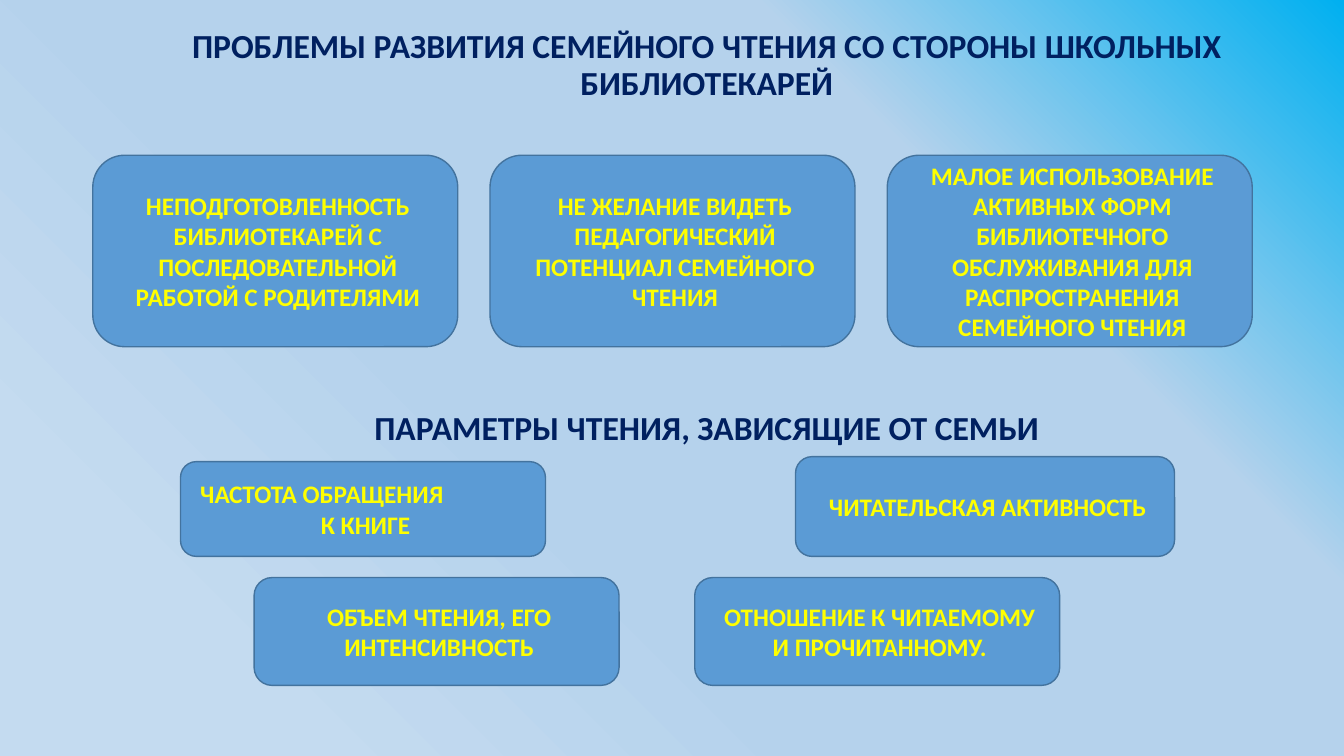
from copy import deepcopy

from pptx import Presentation
from pptx.dml.color import RGBColor
from pptx.enum.shapes import MSO_SHAPE
from pptx.enum.text import MSO_ANCHOR, MSO_AUTO_SIZE, PP_ALIGN
from pptx.util import Inches, Pt

ROUNDED = MSO_SHAPE.ROUNDED_RECTANGLE
MIDDLE = MSO_ANCHOR.MIDDLE
FIXED_SIZE = MSO_AUTO_SIZE.NONE
CENTER, LEFT = PP_ALIGN.CENTER, PP_ALIGN.LEFT

NAVY = RGBColor(0x00, 0x20, 0x60)
YELLOW = RGBColor(0xFF, 0xFF, 0x00)
BLUE = RGBColor(0x5B, 0x9B, 0xD5)
OUTLINE = RGBColor(0x43, 0x73, 0x9E)
SKY = RGBColor(0x00, 0xB0, 0xF0)
PALE = RGBColor(0xB5, 0xD2, 0xEC)
PALEST = RGBColor(0xC4, 0xDB, 0xF0)

BACKGROUND_STOPS = [(0, SKY), (0.28, PALE), (0.61, PALE), (0.85, PALEST)]
TITLE = "ПРОБЛЕМЫ РАЗВИТИЯ СЕМЕЙНОГО ЧТЕНИЯ СО СТОРОНЫ ШКОЛЬНЫХ БИБЛИОТЕКАРЕЙ"
SUBTITLE = "ПАРАМЕТРЫ ЧТЕНИЯ, ЗАВИСЯЩИЕ ОТ СЕМЬИ"
HEADING_LEFT, HEADING_WIDTH, HEADING_HEIGHT = 1.26, 11.5, 0.63
CARD_WIDTH = 3.62
PROBLEM_LEFT, PROBLEM_STEP = 0.92, 3.94
PROBLEMS = [
    "НЕПОДГОТОВЛЕННОСТЬ БИБЛИОТЕКАРЕЙ С ПОСЛЕДОВАТЕЛЬНОЙ РАБОТОЙ С РОДИТЕЛЯМИ",
    "НЕ ЖЕЛАНИЕ ВИДЕТЬ ПЕДАГОГИЧЕСКИЙ ПОТЕНЦИАЛ СЕМЕЙНОГО ЧТЕНИЯ",
    "МАЛОЕ ИСПОЛЬЗОВАНИЕ АКТИВНЫХ ФОРМ БИБЛИОТЕЧНОГО ОБСЛУЖИВАНИЯ "
    "ДЛЯ РАСПРОСТРАНЕНИЯ СЕМЕЙНОГО ЧТЕНИЯ",
]
PARAMETERS = [
    ("ЧИТАТЕЛЬСКАЯ АКТИВНОСТЬ", 7.89, 4.53, 3.76, 0.99),
    ("ОБЪЕМ ЧТЕНИЯ, ЕГО ИНТЕНСИВНОСТЬ", 2.52, 5.73, CARD_WIDTH, 1.07),
    ("ОТНОШЕНИЕ К ЧИТАЕМОМУ И ПРОЧИТАННОМУ.", 6.89, 5.73, CARD_WIDTH, 1.07),
]


class SlideBuilder:
    font_name = "Calibri"

    def __init__(self, page):
        self.page = page

    def gradient_background(self, stops):
        fill = self.page.background.fill
        fill.gradient()
        fill.gradient_angle = 225
        stop_list = self.page.element.xpath(".//a:gsLst")[0]
        while len(stop_list) < len(stops):
            stop_list.append(deepcopy(stop_list[0]))
        for stop, (position, color) in zip(fill.gradient_stops, stops):
            stop.position = position
            stop.color.rgb = color

    def set_text(self, box, text, size, color):
        frame = box.text_frame
        frame.text = text
        frame.word_wrap = True
        frame.auto_size = FIXED_SIZE
        frame.vertical_anchor = MIDDLE
        for para in frame.paragraphs:
            para.alignment = CENTER
            para.font.name = self.font_name
            para.font.size = Pt(size)
            para.font.bold = True
            para.font.color.rgb = color

    def heading(self, box, text, top):
        box.left, box.top = Inches(HEADING_LEFT), Inches(top)
        box.width, box.height = Inches(HEADING_WIDTH), Inches(HEADING_HEIGHT)
        self.set_text(box, text, 24, NAVY)
        box.text_frame.paragraphs[0].line_spacing = 0.9

    def title(self, text, top):
        self.heading(self.page.shapes.title, text, top)

    def subtitle(self, text, top):
        self.heading(self.page.shapes.add_textbox(0, 0, 0, 0), text, top)

    def card(self, text, left, top, width, height):
        box = self.page.shapes.add_shape(
            ROUNDED, Inches(left), Inches(top), Inches(width), Inches(height))
        box.shadow.inherit = False
        box.fill.solid()
        box.fill.fore_color.rgb = BLUE
        box.line.color.rgb = OUTLINE
        box.line.width = Pt(1)
        self.set_text(box, text, 18, YELLOW)
        box.text_frame.margin_left = Inches(0.15)
        return box


def main():
    deck = Presentation()
    deck.slide_width, deck.slide_height = Inches(13.33), Inches(7.5)
    builder = SlideBuilder(deck.slides.add_slide(deck.slide_layouts[5]))
    builder.gradient_background(BACKGROUND_STOPS)

    builder.title(TITLE, 0.34)
    for column, text in enumerate(PROBLEMS):
        builder.card(text, PROBLEM_LEFT + column * PROBLEM_STEP, 1.54, CARD_WIDTH, 1.9)

    builder.subtitle(SUBTITLE, 3.95)
    frequency = builder.card("ЧАСТОТА ОБРАЩЕНИЯ\nК КНИГЕ", 1.79, 4.58, CARD_WIDTH, 0.94)
    frequency.text_frame.paragraphs[0].alignment = LEFT
    for parameter in PARAMETERS:
        builder.card(*parameter)

    deck.save("out.pptx")


if __name__ == "__main__":
    main()
